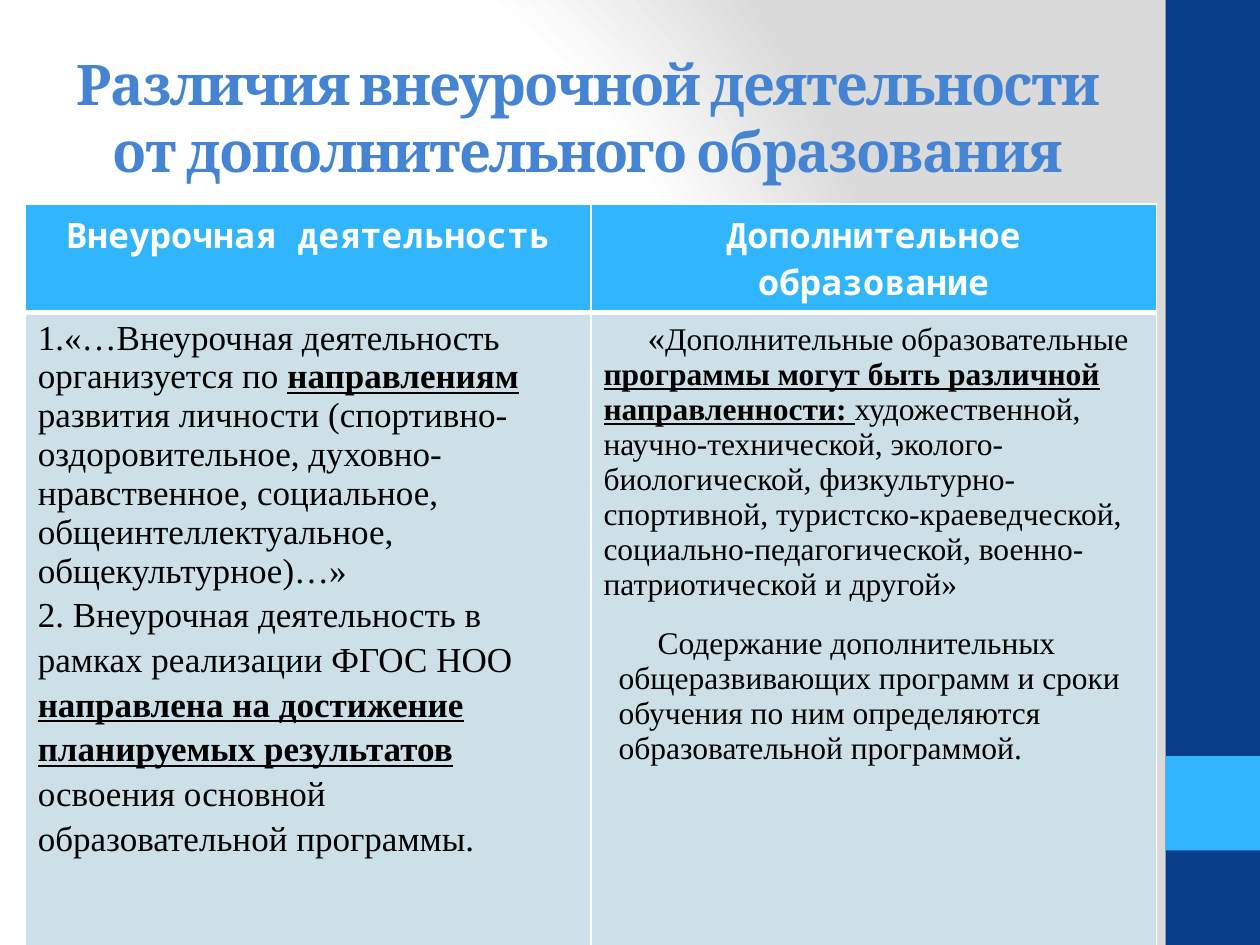
"""Builds the slide comparing extracurricular activity with additional education."""
import lxml.etree
import pptx
import pptx.dml.color
import pptx.enum.shapes
import pptx.enum.text
import pptx.oxml
import pptx.oxml.ns
import pptx.util

Inches, Pt = pptx.util.Inches, pptx.util.Pt
RGBColor = pptx.dml.color.RGBColor
qn = pptx.oxml.ns.qn
CENTER = pptx.enum.text.PP_ALIGN.CENTER

NAVY = RGBColor(0x07, 0x3E, 0x87)
SKY = RGBColor(0x31, 0xB6, 0xFD)
PALE = RGBColor(0xCD, 0xE0, 0xE8)
TITLE_BLUE = RGBColor(0x45, 0x84, 0xD3)
WHITE = RGBColor(0xFF, 0xFF, 0xFF)
BLACK = RGBColor(0, 0, 0)
SILVER = RGBColor(0xDA, 0xDA, 0xDA)


def add_run(paragraph, text, font, size, color, bold=False, underline=False):
    run = paragraph.add_run()
    run.text = text
    run.font.name = font
    run.font.size = Pt(size)
    run.font.color.rgb = color
    run.font.bold = bold
    run.font.underline = underline
    return run


def add_border(cell, side, width):
    line = lxml.etree.SubElement(cell._tc.get_or_add_tcPr(), qn(f"a:{side}"), w=str(Pt(width)))
    fill = lxml.etree.SubElement(line, qn("a:solidFill"))
    lxml.etree.SubElement(fill, qn("a:srgbClr"), val=str(WHITE))


prs = pptx.Presentation()
prs.slide_width, prs.slide_height = Inches(10), Inches(7.5)
slide = prs.slides.add_slide(prs.slide_layouts[6])

background = slide.background.fill
background.gradient()
gradient = background._fill._gradFill
for child in list(gradient):
    gradient.remove(child)
stops = lxml.etree.SubElement(gradient, qn("a:gsLst"))
for position, color in ((0, WHITE), (75, WHITE), (100, SILVER)):
    stop = lxml.etree.SubElement(stops, qn("a:gs"), pos=str(position * 1000))
    lxml.etree.SubElement(stop, qn("a:srgbClr"), val=str(color))
circle = lxml.etree.SubElement(gradient, qn("a:path"), {"path": "circle"})
lxml.etree.SubElement(circle, qn("a:fillToRect"), l="20000", t="50000", r="100000", b="50000")

for top, height, color in ((0, 7.5, NAVY), (6, 0.75, SKY)):
    band = slide.shapes.add_shape(
        pptx.enum.shapes.MSO_SHAPE.RECTANGLE, Inches(9.25), Inches(top), Inches(0.75), Inches(height))
    band.shadow.inherit = False
    band.fill.solid()
    band.fill.fore_color.rgb = color
    band.line.fill.background()

comparison = slide.shapes.add_table(2, 2, Inches(0.2), Inches(1.62), Inches(8.98), Inches(5.67)).table
comparison.rows[0].height, comparison.rows[1].height = Inches(0.48), Inches(5.19)

for column, heading in enumerate(("Внеурочная деятельность", "Дополнительное образование")):
    paragraph = comparison.cell(0, column).text_frame.paragraphs[0]
    paragraph.alignment = CENTER
    add_run(paragraph, heading, "Noto Sans Mono", 20, WHITE, bold=True)

descriptions = (
    (
        ({}, 0, 0, (
            ("1.«…Внеурочная деятельность организуется по ", 20, False),
            ("направлениям", 20, True),
            (" развития личности (спортивно-оздоровительное, духовно-нравственное, социальное, "
             "общеинтеллектуальное, общекультурное)…»", 20, False))),
        ({"line_spacing": 1.15, "space_after": Pt(10)}, 0, 0, (
            ("2. Внеурочная деятельность в рамках реализации ФГОС НОО ", 20, False),
            ("направлена на достижение планируемых результатов ", 20, True),
            ("освоения основной образовательной программы.", 20, False))),
    ),
    (
        ({"space_after": Pt(10)}, 0, 0.35, (
            ("«", 20, False),
            ("Дополнительные образовательные ", 18, False),
            ("программы могут быть различной направленности: ", 18, True),
            ("художественной, научно-технической, эколого-биологической, физкультурно-спортивной, "
             "туристско-краеведческой, социально-педагогической, военно-патриотической и другой»", 18, False))),
        ({"space_before": Pt(4)}, 0.12, 0.31, (
            ("Содержание дополнительных общеразвивающих программ и сроки обучения по ним "
             "определяются образовательной программой.", 18, False),)),
    ),
)
for column, paragraphs in enumerate(descriptions):
    frame = comparison.cell(1, column).text_frame
    for index, (spacing, margin, indent, runs) in enumerate(paragraphs):
        paragraph = frame.add_paragraph() if index else frame.paragraphs[0]
        for attribute, value in spacing.items():
            setattr(paragraph, attribute, value)
        properties = paragraph._p.get_or_add_pPr()
        properties.set("marL", str(Inches(margin)))
        properties.set("indent", str(Inches(indent)))
        for text, size, emphasis in runs:
            add_run(paragraph, text, "Times New Roman", size, BLACK, emphasis, emphasis)

for row, (color, top_width, bottom_width) in enumerate(((SKY, 1, 3), (PALE, 3, 1))):
    for column in range(2):
        cell = comparison.cell(row, column)
        for side, width in (("lnL", 1), ("lnR", 1), ("lnT", top_width), ("lnB", bottom_width)):
            add_border(cell, side, width)
        cell.fill.solid()
        cell.fill.fore_color.rgb = color

title = slide.shapes.add_textbox(Inches(0.5), Inches(0.3), Inches(8.33), Inches(1.25)).text_frame
title.word_wrap = True
title.vertical_anchor = pptx.enum.text.MSO_ANCHOR.MIDDLE
title.paragraphs[0].alignment = CENTER
title_run = add_run(title.paragraphs[0], "Различия внеурочной деятельности от дополнительного образования",
                    "Cambria", 32, TITLE_BLUE, bold=True)
title_run.font._element.set("spc", "-100")

prs.save("out.pptx")
